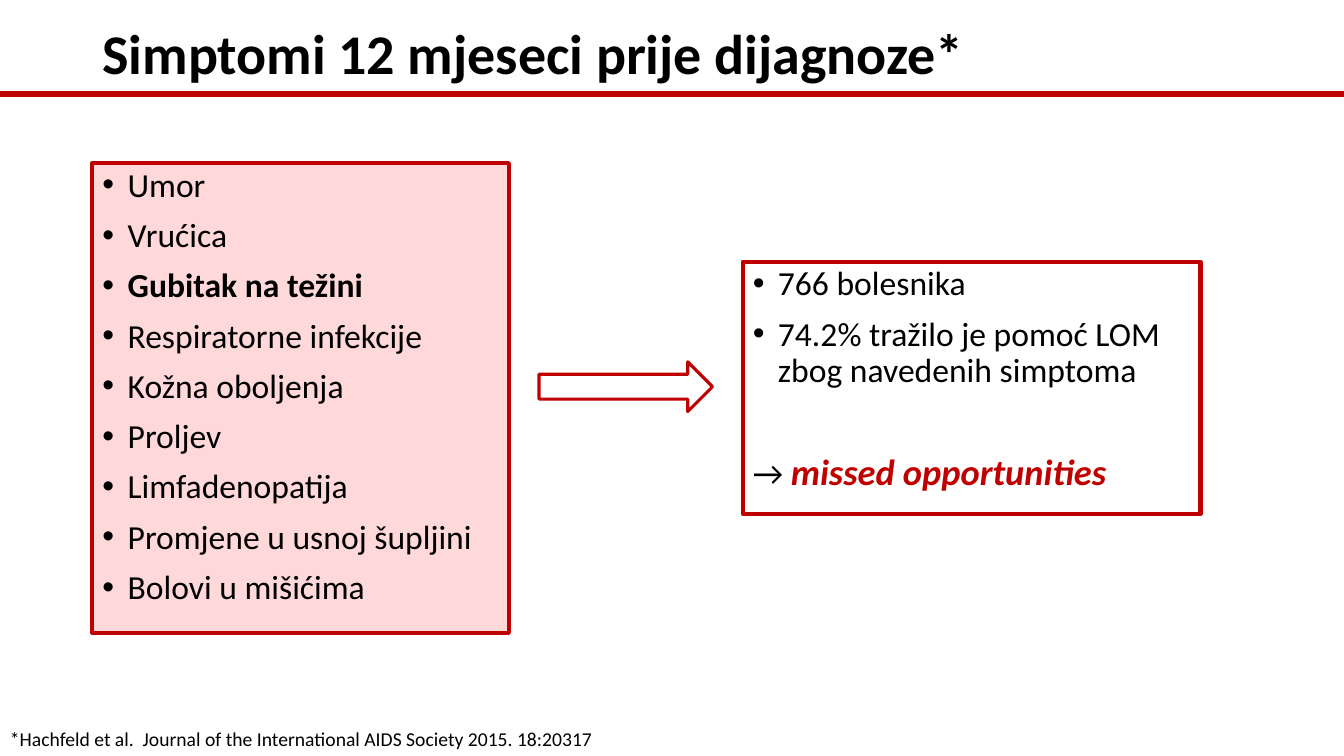
from lxml import etree
from pptx import Presentation
from pptx.dml.color import RGBColor
from pptx.enum.shapes import MSO_CONNECTOR as Connector, MSO_SHAPE as Shape
from pptx.enum.text import MSO_ANCHOR as Anchor, MSO_AUTO_SIZE as AutoSize, PP_ALIGN as Align
from pptx.oxml.ns import qn
from pptx.util import Pt

BLACK = RGBColor(0x00, 0x00, 0x00)
WHITE = RGBColor(0xFF, 0xFF, 0xFF)
RED = RGBColor(0xC0, 0x00, 0x00)
PINK = RGBColor(0xFF, 0xD9, 0xDA)
FONT = "Calibri"
SLIDE_WIDTH, SLIDE_HEIGHT = 960, 540

SYMPTOMS = ["Umor", "Vrućica", "Gubitak na težini", "Respiratorne infekcije",
            "Kožna oboljenja", "Proljev", "Limfadenopatija",
            "Promjene u usnoj šupljini", "Bolovi u mišićima"]
KEY_SYMPTOM = "Gubitak na težini"
FINDINGS = ["766 bolesnika", "74.2% tražilo je pomoć LOM zbog navedenih simptoma"]


def add_text(paragraph, text, size=24, color=BLACK, bold=False, italic=False):
    run = paragraph.add_run()
    run.text = text
    font = run.font
    font.name, font.size, font.bold, font.italic = FONT, Pt(size), bold, italic
    font.color.rgb = color


def place(shape, box):
    shape.left, shape.top, shape.width, shape.height = map(Pt, box)


def set_outline(shape, width):
    shape.line.color.rgb = RED
    shape.line.width = Pt(width)


def next_paragraph(frame, bullet=True, space_before=10):
    """Return the empty first paragraph or a new one, set up as a list item."""
    first = frame.paragraphs[0]
    paragraph = frame.add_paragraph() if first.runs else first
    paragraph.line_spacing = 0.9
    paragraph.space_before = Pt(space_before)
    properties = paragraph._p.get_or_add_pPr()
    indent = Pt(18) if bullet else 0
    properties.set("marL", str(indent))
    properties.set("indent", str(-indent))
    if bullet:
        etree.SubElement(properties, qn("a:buFont")).set("typeface", "Arial")
        etree.SubElement(properties, qn("a:buChar")).set("char", "•")
    else:
        etree.SubElement(properties, qn("a:buNone"))
    return paragraph


def build_header(slide, box):
    left, top, width, height = box
    title = slide.shapes.title
    place(title, box)
    frame = title.text_frame
    frame.auto_size = AutoSize.NONE
    frame.vertical_anchor = Anchor.MIDDLE
    paragraph = frame.paragraphs[0]
    paragraph.alignment = Align.LEFT
    paragraph.line_spacing = 0.9
    add_text(paragraph, "Simptomi 12 mjeseci prije dijagnoze*", size=40, bold=True)

    # Rule across the slide, through the lower part of the title box
    rule_top = Pt(top + 65.5)
    rule = slide.shapes.add_connector(Connector.STRAIGHT, 0, rule_top, Pt(SLIDE_WIDTH), rule_top)
    set_outline(rule, 4.5)
    etree.SubElement(rule._element.spPr, qn("a:effectLst"))


def build_list(placeholder, box, items, bold_item=None):
    place(placeholder, box)
    set_outline(placeholder, 3)
    frame = placeholder.text_frame
    frame.auto_size = AutoSize.NONE
    frame.vertical_anchor = Anchor.TOP
    for item in items:
        add_text(next_paragraph(frame), item, bold=item == bold_item)
    return frame


def build_symptoms(slide, box):
    placeholder = slide.placeholders[1]
    build_list(placeholder, box, SYMPTOMS, bold_item=KEY_SYMPTOM)
    placeholder.fill.solid()
    placeholder.fill.fore_color.rgb = PINK


def build_findings(slide, box):
    frame = build_list(slide.placeholders[2], box, FINDINGS)
    # Conclusion, set apart from the list by one line
    conclusion = next_paragraph(frame, bullet=False, space_before=46)
    add_text(conclusion, "→ ")
    add_text(conclusion, "missed opportunities", size=26, color=RED, bold=True, italic=True)


def build_arrow(slide, box):
    arrow = slide.shapes.add_shape(Shape.RIGHT_ARROW, *map(Pt, box))
    arrow.shadow.inherit = False
    arrow.fill.solid()
    arrow.fill.fore_color.rgb = WHITE
    set_outline(arrow, 2.25)


def build_source_note(slide, box):
    frame = slide.shapes.add_textbox(*map(Pt, box)).text_frame
    frame.word_wrap = True
    add_text(frame.paragraphs[0],
             "*Hachfeld et al.  Journal of the International AIDS Society 2015. 18:20317", size=14)


def main():
    presentation = Presentation()
    presentation.slide_width = Pt(SLIDE_WIDTH)
    presentation.slide_height = Pt(SLIDE_HEIGHT)
    two_content = presentation.slide_layouts[3]
    slide = presentation.slides.add_slide(two_content)

    build_header(slide, (66, 1.5, 827, 77))
    build_symptoms(slide, (66, 116.5, 297.5, 335.5))
    build_findings(slide, (530.5, 187, 327, 180))
    build_arrow(slide, (385, 258.5, 124, 35.5))
    build_source_note(slide, (0, 515.5, 480, 24.5))
    presentation.save("out.pptx")


if __name__ == "__main__":
    main()
